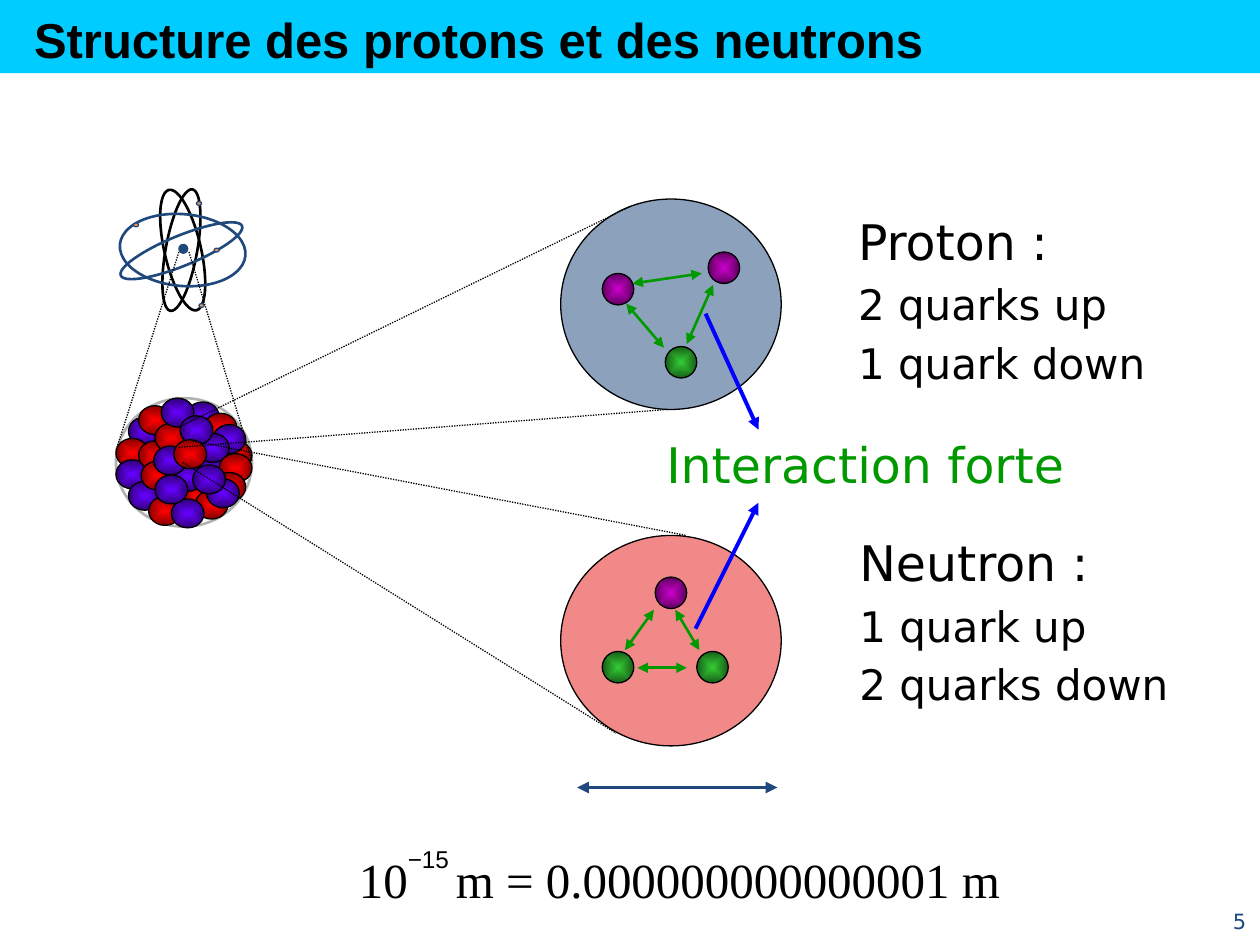
from lxml import etree
from pptx import Presentation
from pptx.dml.color import RGBColor
from pptx.enum.dml import MSO_LINE
from pptx.enum.shapes import MSO_CONNECTOR, MSO_SHAPE
from pptx.enum.text import MSO_ANCHOR, MSO_AUTO_SIZE, PP_ALIGN
from pptx.oxml.ns import qn
from pptx.util import Inches, Pt

OVAL, RECTANGLE = MSO_SHAPE.OVAL, MSO_SHAPE.RECTANGLE
STRAIGHT, DOTTED = MSO_CONNECTOR.STRAIGHT, MSO_LINE.ROUND_DOT
LEFT, RIGHT = PP_ALIGN.LEFT, PP_ALIGN.RIGHT
TOP, MIDDLE = MSO_ANCHOR.TOP, MSO_ANCHOR.MIDDLE
NO_AUTOFIT = MSO_AUTO_SIZE.NONE

BLACK, NAVY, GREEN, BLUE = "000000", "1F497D", "009900", "0000FF"
SANS, ARIAL, SERIF = "DejaVu Sans", "Arial", "Times New Roman"
BALLS = {
    "up": ("CC00CC", "5E005E"),
    "down": ("33CC33", "185E18"),
    "proton": ("FF0000", "860000"),
    "neutron": ("6600FF", "2F0076"),
}
NUCLEONS = [
    ("neutron", 0.10, 0.15), ("proton", 0, 0.32), ("neutron", 0, 0.49),
    ("neutron", 0.62, 0.46), ("neutron", 0.56, 0.03), ("proton", 0.18, 0.06),
    ("proton", 0.18, 0.34), ("proton", 0.52, 0.66), ("proton", 0.64, 0.18),
    ("proton", 0.31, 0.20), ("proton", 0.82, 0.34), ("proton", 0.70, 0.12),
    ("neutron", 0.36, 0), ("neutron", 0.77, 0.21), ("neutron", 0.10, 0.66),
    ("neutron", 0.64, 0.28), ("proton", 0.20, 0.50), ("proton", 0.63, 0.73),
    ("proton", 0.26, 0.78), ("neutron", 0.44, 0.51), ("neutron", 0.44, 0.80),
    ("neutron", 0.30, 0.38), ("proton", 0.82, 0.44), ("proton", 0.77, 0.59),
    ("neutron", 0.72, 0.64), ("neutron", 0.61, 0.53), ("neutron", 0.51, 0.14),
    ("neutron", 0.31, 0.61), ("proton", 0.46, 0.33),
]


def rgb(value):
    return RGBColor.from_string(value)


def place(shape, box):
    for name, value in zip(("left", "top", "width", "height"), box):
        setattr(shape, name, Inches(value))


def write(paragraph, text, size, font_name, color, bold=False):
    run = paragraph.add_run()
    run.text = text
    formats = {"size": Pt(size), "name": font_name, "bold": bold}
    for name, value in formats.items():
        setattr(run.font, name, value)
    run.font.color.rgb = rgb(color)
    return run


def set_frame(frame, wrap, anchor):
    formats = {"auto_size": NO_AUTOFIT, "word_wrap": wrap, "vertical_anchor": anchor}
    for name, value in formats.items():
        setattr(frame, name, value)


def add_label(slide, box, anchor=TOP, wrap=False):
    label = slide.shapes.add_textbox(*map(Inches, box))
    set_frame(label.text_frame, wrap, anchor)
    return label.text_frame.paragraphs[0]


def add_figure(slide, kind, box, fill=None, line=None, width=0.75):
    figure = slide.shapes.add_shape(kind, *map(Inches, box))
    figure.shadow.inherit = False
    if fill:
        figure.fill.solid()
        figure.fill.fore_color.rgb = rgb(fill)
    else:
        figure.fill.background()
    if line:
        figure.line.color.rgb = rgb(line)
        figure.line.width = Pt(width)
    else:
        figure.line.fill.background()
    return figure


def add_ball(slide, kind, left, top, width, height):
    ball = add_figure(slide, OVAL, (left, top, width, height), line=BLACK)
    ball.fill.gradient()
    for stop, color, position in zip(ball.fill.gradient_stops, BALLS[kind], (0, 1)):
        stop.color.rgb = rgb(color)
        stop.position = position
    gradient = ball._element.spPr.find(qn("a:gradFill"))
    gradient.remove(gradient.find(qn("a:lin")))
    shading = etree.SubElement(gradient, qn("a:path"), {"path": "shape"})
    etree.SubElement(shading, qn("a:fillToRect"), dict.fromkeys("ltrb", "50000"))


def add_line(slide, ends, color=BLACK, width=0.75, dash=None, arrows=()):
    connector = slide.shapes.add_connector(STRAIGHT, *map(Inches, ends))
    connector.line.color.rgb = rgb(color)
    connector.line.width = Pt(width)
    if dash:
        connector.line.dash_style = dash
    properties = connector._element.spPr
    for end in arrows:
        etree.SubElement(properties.find(qn("a:ln")), qn(f"a:{end}"), {"type": "triangle"})
    etree.SubElement(properties, qn("a:effectLst"))


def add_header(slide, box):
    left, top, width, height = box
    band = add_figure(slide, RECTANGLE, box, "00CCFF")
    slide.shapes._spTree.insert(2, band._element)
    title = slide.shapes.title
    place(title, (left + 0.17, top + 0.03, width - 0.37, height - 0.02))
    set_frame(title.text_frame, True, MIDDLE)
    heading = title.text_frame.paragraphs[0]
    heading.alignment = LEFT
    write(heading, "Structure des protons et des neutrons", 28, ARIAL, BLACK, True)


def add_nucleus(slide, box):
    left, top = box[:2]
    add_figure(slide, OVAL, box, line="B2B2B2", width=1.5)
    for kind, dx, dy in NUCLEONS:
        add_ball(slide, kind, left + dx, top + dy, 0.26, 0.23)


def add_atom(slide, left, top):
    orbits = [
        (0.03, 0.36, 0.98, 0.25, 280.3, BLACK),
        (0.04, 0.34, 0.98, 0.29, 257.1, BLACK),
        (0, 0.37, 1.04, 0.24, 337.8, NAVY),
        (0.03, 0.20, 1, 0.57, 5.1, NAVY),
    ]
    for dx, dy, width, height, angle, color in orbits:
        orbit = add_figure(slide, OVAL, (left + dx, top + dy, width, height),
                           line=color, width=1.5)
        orbit.rotation = angle
    add_figure(slide, OVAL, (left + 0.5, top + 0.44, 0.07, 0.07), NAVY, NAVY)
    for dx, dy in [(0.64, 0.10), (0.78, 0.47), (0.14, 0.27), (0.66, 0.91)]:
        add_figure(slide, OVAL, (left + dx, top + dy, 0.04, 0.03), "F79646", NAVY)


def add_hadron(slide, box, color, quarks, gluons, force):
    left, top = box[:2]
    hadron = add_figure(slide, OVAL, box, color, BLACK)
    tint = hadron._element.spPr.find(qn("a:solidFill"))[0]
    etree.SubElement(tint, qn("a:alpha"), {"val": "51000"})
    for kind, dx, dy in quarks:
        add_ball(slide, kind, left + dx, top + dy, 0.25, 0.25)
    links = [(gluon, GREEN, 1.5, ("headEnd", "tailEnd")) for gluon in gluons]
    links.append((force, BLUE, 2.25, ("tailEnd",)))
    for (x1, y1, x2, y2), link_color, width, arrows in links:
        ends = (left + x1, top + y1, left + x2, top + y2)
        add_line(slide, ends, link_color, width, arrows=arrows)


def add_composition(body, box, lines):
    place(body, box)
    set_frame(body.text_frame, False, TOP)
    for index, text in enumerate(lines):
        paragraph = body.text_frame.add_paragraph() if index else body.text_frame.paragraphs[0]
        write(paragraph, text, 24 if index else 28, SANS, BLACK)
        properties = paragraph._p.get_or_add_pPr()
        properties.set("marL", "0")
        properties.set("indent", "0")
        etree.SubElement(properties, qn("a:buNone"))


def add_scale(slide, left, top):
    add_line(slide, (left + 3.42, top, left + 1.83, top), NAVY, 2.25,
             arrows=("headEnd", "tailEnd"))
    formula = add_label(slide, (left, top + 0.17, 5.34, 0.78))
    formula.line_spacing = 1.45
    write(formula, "10", 28, SERIF, BLACK)
    exponent = write(formula, "−15 ", 24, ARIAL, BLACK)
    exponent.font._element.set("baseline", "72000")
    write(formula, "m = 0.000000000000001 m", 28, SERIF, BLACK)


def main():
    deck = Presentation()
    deck.slide_width, deck.slide_height = Inches(10), Inches(7.5)
    slide = deck.slides.add_slide(deck.slide_layouts[3])
    add_header(slide, (0, 0, 10, 0.58))
    proton_text, neutron_text = list(slide.placeholders)[1:3]
    add_composition(proton_text, (6.71, 1.63, 2.51, 1.53),
                    ["Proton :", "2 quarks up", "1 quark down"])
    add_composition(neutron_text, (6.72, 4.18, 2.68, 1.53),
                    ["Neutron :", "1 quark up", "2 quarks down"])

    add_nucleus(slide, (0.92, 3.16, 1.08, 1.02))
    add_atom(slide, 0.92, 1.5)
    zooms = [
        (1.42, 2, 0.92, 3.58), (1.5, 2, 2, 3.66),
        (1.45, 3.67, 4.89, 5.82), (1.53, 3.5, 5.45, 4.25),
        (1.42, 3.55, 5.29, 3.25), (1.42, 3.39, 5, 1.64),
    ]
    for ends in zooms:
        add_line(slide, ends, dash=DOTTED)

    add_hadron(slide, (4.45, 1.58, 1.75, 1.67), NAVY,
               [("down", 0.83, 1.17), ("up", 1.17, 0.42), ("up", 0.33, 0.59)],
               [(0.52, 0.83, 0.82, 1.18), (1, 1.15, 1.21, 0.68), (0.57, 0.67, 1.12, 0.59)],
               (1.15, 0.91, 1.57, 1.83))
    add_hadron(slide, (4.45, 4.25, 1.75, 1.67), "E71919",
               [("down", 0.33, 0.92), ("down", 1.08, 0.92), ("up", 0.75, 0.33)],
               [(0.51, 0.91, 0.74, 0.59), (0.91, 0.59, 1.1, 0.91), (0.61, 1.05, 1, 1.05)],
               (1.07, 0.74, 1.57, -0.26))
    write(add_label(slide, (5.19, 3.4, 3.4, 0.57)), "Interaction forte", 28, SANS, GREEN)

    add_scale(slide, 2.75, 6.25)
    page_number = add_label(slide, (9.33, 7.15, 0.66, 0.32), MIDDLE, True)
    page_number.alignment = RIGHT
    write(page_number, "5", 12, SANS, NAVY)
    deck.save("out.pptx")


if __name__ == "__main__":
    main()
